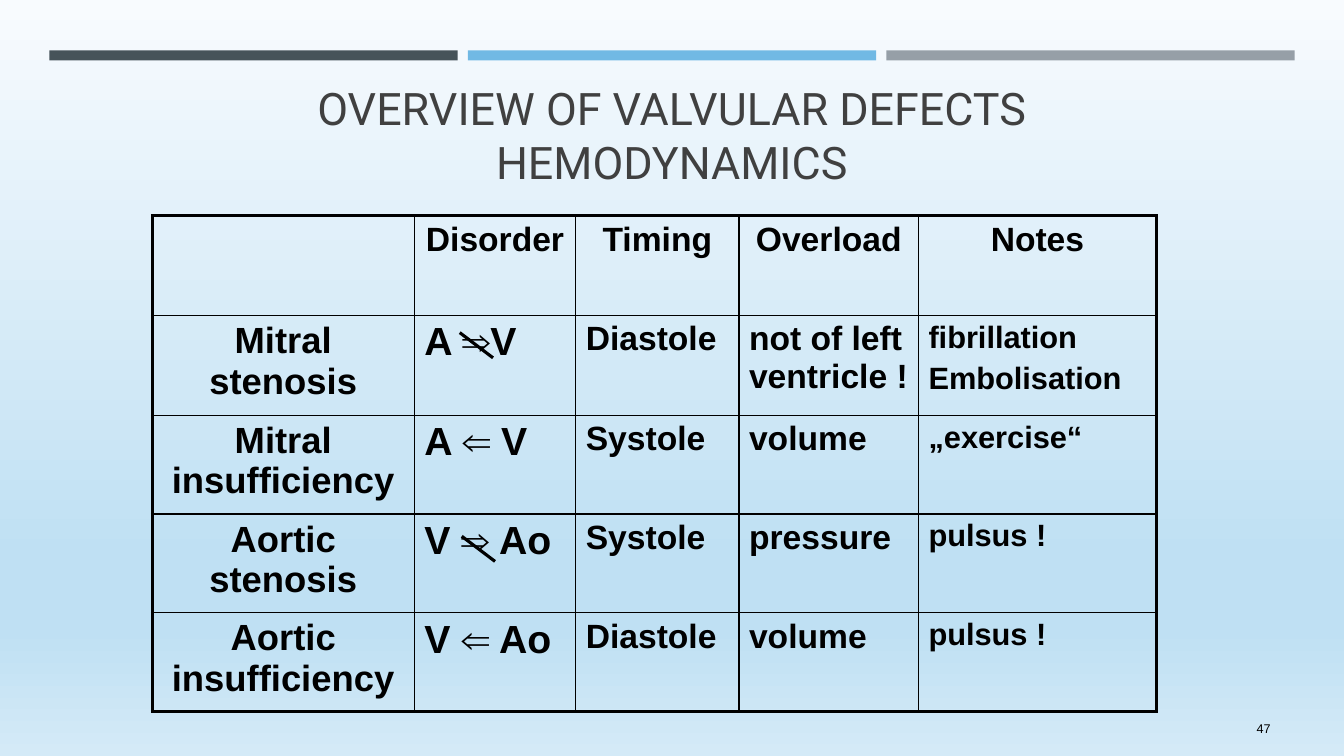
from copy import deepcopy
from dataclasses import dataclass

from lxml import etree
from pptx import Presentation
from pptx.dml.color import RGBColor
from pptx.enum.shapes import MSO_CONNECTOR, MSO_SHAPE
from pptx.enum.text import MSO_ANCHOR, MSO_AUTO_SIZE, PP_ALIGN
from pptx.oxml.ns import qn
from pptx.util import Inches, Pt

LEFT, CENTER, RIGHT = PP_ALIGN.LEFT, PP_ALIGN.CENTER, PP_ALIGN.RIGHT
MIDDLE, BOTTOM = MSO_ANCHOR.MIDDLE, MSO_ANCHOR.BOTTOM
NO_AUTOFIT = MSO_AUTO_SIZE.NONE
RECTANGLE, STRAIGHT = MSO_SHAPE.RECTANGLE, MSO_CONNECTOR.STRAIGHT
TITLE_ONLY = 5


@dataclass(frozen=True)
class Theme:
    black: str = "000000"
    title_color: str = "404040"
    bars: tuple = ("465359", "71B9E4", "969FA7")
    background: tuple = ((0, "F8FBFE"), (0.74, "BFE0F3"), (0.83, "BFE0F3"), (1, "D4EAF7"))
    title_font: str = "Roboto"
    body_font: str = "Arial"
    title_size: int = 32
    header_size: int = 24
    column_sizes: tuple = (26, 28, 24, 24, 22)
    number_size: int = 9
    thin: float = 1
    thick: float = 2.25


@dataclass(frozen=True)
class Box:
    left: float
    top: float
    width: float
    height: float

    def lengths(self):
        return [Inches(value) for value in (self.left, self.top, self.width, self.height)]


THEME = Theme()
SLIDE_WIDTH, SLIDE_HEIGHT = 13.33, 7.5
BARS_BOX = Box(0.49, 0.5, 12.35, 0.1)
BAR_GAP = 0.1
TITLE_BOX = Box(2.25, 0.67, 8.83, 1.25)
TABLE_BOX = Box(1.51, 2.14, 9.96, 4.92)
NUMBER_BOX = Box(11.55, 7.03, 1.15, 0.4)

COLUMN_WIDTHS = (2.6, 1.6, 1.62, 1.78, 2.36)
ROW_HEIGHTS = (0.99, 0.99, 0.98, 0.98, 0.98)
DEFECTS = (
    ("", "Disorder", "Timing", "Overload", "Notes"),
    ("Mitral\nstenosis", "A ⇒V", "Diastole", "not of left ventricle !", "fibrillation\nEmbolisation"),
    ("Mitral insufficiency", "A ⇐ V", "Systole", "volume", "„exercise“"),
    ("Aortic\nstenosis", "V ⇒ Ao", "Systole", "pressure", "pulsus !"),
    ("Aortic\ninsufficiency", "V ⇐ Ao", "Diastole", "volume", "pulsus !"),
)
DISORDER_COLUMN = 1
STRIKE_OFFSETS = {1: (0.45, 0.17), 3: (0.47, 0.22)}  # row: inches from the cell's corner
STRIKE_SIZE = (0.33, 0.25)


def color(value):
    return RGBColor.from_string(value)


def set_format(target, values):
    for name, value in values.items():
        setattr(target, name, value)


def format_paragraph(paragraph, alignment, font_name, size, font_color, bold=False):
    paragraph.alignment = alignment
    set_format(paragraph.font, {"name": font_name, "size": Pt(size), "bold": bold})
    paragraph.font.color.rgb = color(font_color)


def set_relative_space_before(paragraph, percent):
    properties = paragraph._p.get_or_add_pPr()
    space = etree.Element(qn("a:spcBef"))
    etree.SubElement(space, qn("a:spcPct"), val=str(percent * 1000))
    properties.insert(0, space)


def paint_background(slide):
    fill = slide.background.fill
    fill.gradient()
    fill.gradient_angle = 270
    stop_list = slide.element.find(".//" + qn("a:gsLst"))
    while len(stop_list) < len(THEME.background):
        stop_list.append(deepcopy(stop_list[0]))
    for stop, (position, value) in zip(fill.gradient_stops, THEME.background):
        stop.position = position
        stop.color.rgb = color(value)


def add_bars(slide, box):
    count = len(THEME.bars)
    width = (box.width - BAR_GAP * (count - 1)) / count
    for index, value in enumerate(THEME.bars):
        bar_box = Box(box.left + index * (width + BAR_GAP), box.top, width, box.height)
        bar = slide.shapes.add_shape(RECTANGLE, *bar_box.lengths())
        bar.shadow.inherit = False
        bar.fill.solid()
        bar.fill.fore_color.rgb = color(value)
        bar.line.fill.background()


def add_title(slide, box):
    title = slide.shapes.title
    set_format(title, dict(zip(("left", "top", "width", "height"), box.lengths())))
    frame = title.text_frame
    frame.text = "OVERVIEW OF VALVULAR DEFECTS HEMODYNAMICS"
    set_format(frame, {"vertical_anchor": BOTTOM, "word_wrap": True, "auto_size": NO_AUTOFIT})
    format_paragraph(frame.paragraphs[0], CENTER, THEME.title_font,
                     THEME.title_size, THEME.title_color)


def add_slide_number(slide, box):
    frame = slide.shapes.add_textbox(*box.lengths()).text_frame
    frame.text = "47"
    set_format(frame, {"vertical_anchor": MIDDLE, "word_wrap": True})
    format_paragraph(frame.paragraphs[0], RIGHT, THEME.body_font, THEME.number_size, THEME.black)


def set_borders(cell, row, column):
    """Draw thick lines on the table's outer edges and thin lines inside."""
    outer = {
        "a:lnL": column == 0,
        "a:lnR": column == len(COLUMN_WIDTHS) - 1,
        "a:lnT": row == 0,
        "a:lnB": row == len(ROW_HEIGHTS) - 1,
    }
    properties = cell._tc.get_or_add_tcPr()
    for index, (tag, is_outer) in enumerate(outer.items()):
        width = Pt(THEME.thick if is_outer else THEME.thin)
        line = etree.Element(qn(tag), w=str(int(width)))
        fill = etree.SubElement(line, qn("a:solidFill"))
        etree.SubElement(fill, qn("a:srgbClr"), val=THEME.black)
        properties.insert(index, line)


def fill_cell(cell, row, column, text):
    cell.fill.background()
    set_borders(cell, row, column)
    cell.text_frame.text = text
    size = THEME.header_size if row == 0 else THEME.column_sizes[column]
    alignment = CENTER if row == 0 or column == 0 else LEFT
    for paragraph in cell.text_frame.paragraphs:
        format_paragraph(paragraph, alignment, THEME.body_font, size, THEME.black, bold=True)
        if column > 0:
            set_relative_space_before(paragraph, 20)


def add_defects_table(slide, box):
    frame = slide.shapes.add_table(len(ROW_HEIGHTS), len(COLUMN_WIDTHS), *box.lengths())
    table = frame.table
    set_format(table, {"first_row": False, "horz_banding": False})
    for column, width in zip(table.columns, COLUMN_WIDTHS):
        column.width = Inches(width)
    for row, height in zip(table.rows, ROW_HEIGHTS):
        row.height = Inches(height)
    for row, texts in enumerate(DEFECTS):
        for column, text in enumerate(texts):
            fill_cell(table.cell(row, column), row, column, text)


def add_strikes(slide, box):
    """Cross out the arrows of the stenosis rows."""
    cell_left = box.left + sum(COLUMN_WIDTHS[:DISORDER_COLUMN])
    for row, (offset_x, offset_y) in STRIKE_OFFSETS.items():
        left = cell_left + offset_x
        top = box.top + sum(ROW_HEIGHTS[:row]) + offset_y
        ends = (left, top, left + STRIKE_SIZE[0], top + STRIKE_SIZE[1])
        strike = slide.shapes.add_connector(STRAIGHT, *map(Inches, ends))
        strike.line.color.rgb = color(THEME.black)
        strike.line.width = Pt(THEME.thick)
        etree.SubElement(strike._element.spPr, qn("a:effectLst"))


def build_overview_slide(presentation):
    slide = presentation.slides.add_slide(presentation.slide_layouts[TITLE_ONLY])
    paint_background(slide)
    add_bars(slide, BARS_BOX)
    add_slide_number(slide, NUMBER_BOX)
    add_title(slide, TITLE_BOX)
    add_defects_table(slide, TABLE_BOX)
    add_strikes(slide, TABLE_BOX)


def main():
    presentation = Presentation()
    presentation.slide_width = Inches(SLIDE_WIDTH)
    presentation.slide_height = Inches(SLIDE_HEIGHT)
    build_overview_slide(presentation)
    presentation.save("out.pptx")


if __name__ == "__main__":
    main()
